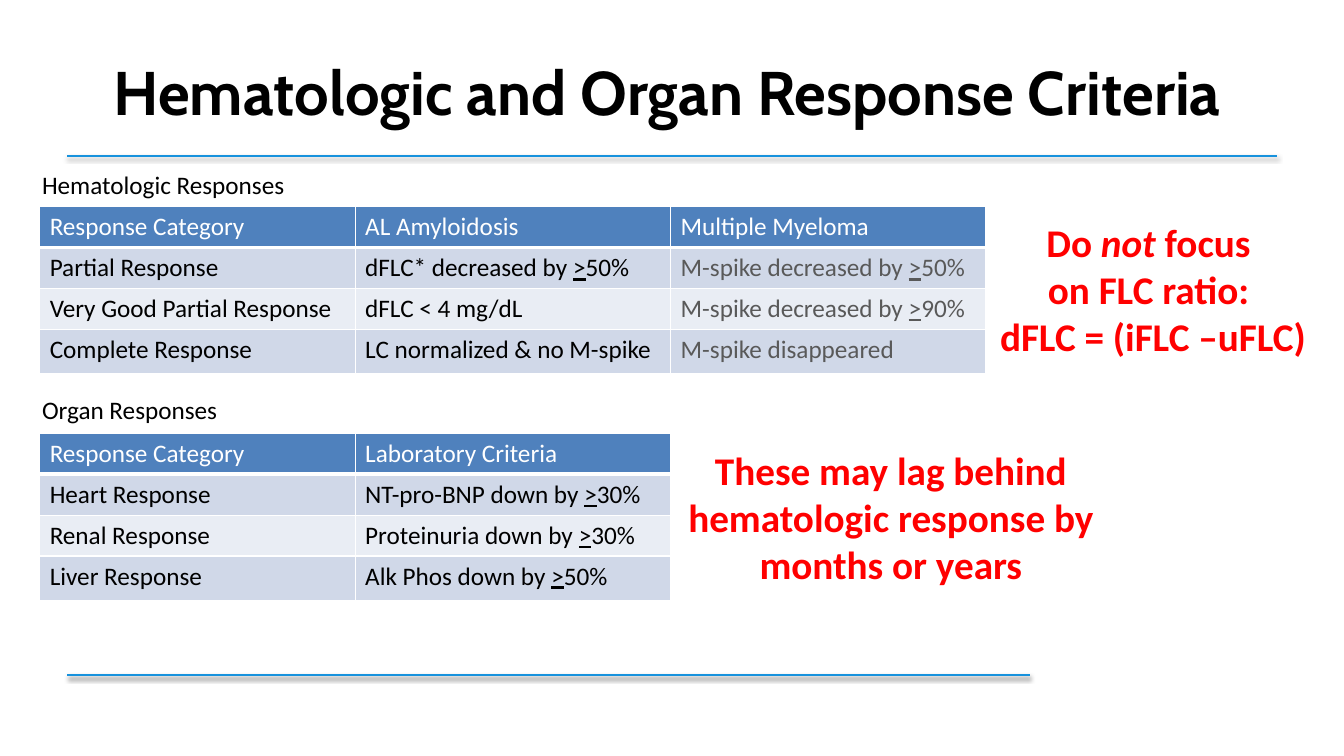
from lxml import etree
from pptx import Presentation
from pptx import util as u
from pptx.dml.color import RGBColor
from pptx.enum import shapes, text
from pptx.oxml import parse_xml
from pptx.oxml.ns import nsdecls, qn

BLACK, WHITE, GREY, RED = "000000", "FFFFFF", "595959", "FF0000"
BLUE, HEADER, BANDS = "1792DD", "4F81BD", ("E9EDF4", "D0D8E8")


def color(value):
    return RGBColor.from_string(value)


class SlideBuilder:
    body_font = "Calibri"
    title_font = "Cabin"
    column_width = u.Cm(7.95)
    row_height = u.Cm(1.03)
    last_row_height = u.Cm(1.12)

    def __init__(self, slide):
        self.slide = slide

    def fill_paragraph(self, paragraph, content, size, ink, bold=False, name=None,
                       underlined=None, italic=None):
        marked = underlined or italic
        parts = content.partition(marked) if marked else (content,)
        for part in filter(None, parts):
            run = paragraph.add_run()
            run.text = part
            if part == underlined:
                run.font.underline = True
            if part == italic:
                run.font.italic = True
        font = paragraph.font
        font.name, font.size, font.bold = name or self.body_font, u.Pt(size), bold
        font.color.rgb = color(ink)

    def textbox(self, left, top, width, height, lines, size, ink=BLACK, wrap=True, centered=True, **style):
        box = self.slide.shapes.add_textbox(u.Cm(left), u.Cm(top), u.Cm(width), u.Cm(height))
        frame = box.text_frame
        frame.word_wrap = wrap
        frame.vertical_anchor = text.MSO_ANCHOR.MIDDLE
        for index, line in enumerate(lines):
            paragraph = frame.add_paragraph() if index else frame.paragraphs[0]
            if centered:
                paragraph.alignment = text.PP_ALIGN.CENTER
            self.fill_paragraph(paragraph, line, size, ink, **style)

    def title(self, content):
        self.textbox(0.81, 1.02, 32.03, 2.54, [content], 44, bold=True, name=self.title_font)

    def label(self, top, width, content):
        self.textbox(0.81, top, width, 1.02, [content], 18, wrap=False, centered=False)

    def callout(self, left, top, width, lines, **style):
        self.textbox(left, top, width, 3.84, lines, 28, RED, bold=True, **style)

    def rule(self, top, right):
        line = self.slide.shapes.add_connector(
            shapes.MSO_CONNECTOR.STRAIGHT, u.Cm(1.7), u.Cm(top), u.Cm(right), u.Cm(top))
        line.line.color.rgb = color(BLUE)
        line.line.width = u.Pt(1.5)
        line._element.spPr.append(parse_xml(
            f'<a:effectLst {nsdecls("a")}><a:outerShdw blurRad="{u.Pt(3.1)}" dist="{u.Pt(1.6)}" '
            f'dir="5400000" rotWithShape="0"><a:srgbClr val="{BLACK}"><a:alpha val="38000"/>'
            '</a:srgbClr></a:outerShdw></a:effectLst>'))

    def borders(self, cell, bottom):
        properties = cell._tc.get_or_add_tcPr()
        for side, width in zip("LRTB", (1, 1, 1, bottom)):
            line = etree.SubElement(properties, qn(f"a:ln{side}"), w=str(u.Pt(width)))
            fill = etree.SubElement(line, qn("a:solidFill"))
            etree.SubElement(fill, qn("a:srgbClr"), val=WHITE)

    def table(self, top, rows):
        columns = len(rows[0])
        height = self.row_height * (len(rows) - 1) + self.last_row_height
        table = self.slide.shapes.add_table(
            len(rows), columns, u.Cm(1), u.Cm(top), self.column_width * columns, height).table
        for column in table.columns:
            column.width = self.column_width
        for row_index, values in enumerate(rows):
            is_last = row_index == len(rows) - 1
            table.rows[row_index].height = self.last_row_height if is_last else self.row_height
            for column_index, value in enumerate(values):
                cell = table.cell(row_index, column_index)
                self.borders(cell, 1 if row_index else 3)
                cell.fill.solid()
                cell.fill.fore_color.rgb = color(BANDS[row_index % 2] if row_index else HEADER)
                ink = (BLACK, BLACK, GREY)[column_index] if row_index else WHITE
                self.fill_paragraph(cell.text_frame.paragraphs[0], value, 18, ink, underlined=">")


def main():
    presentation = Presentation()
    presentation.slide_width, presentation.slide_height = u.Cm(33.87), u.Cm(19.05)
    builder = SlideBuilder(presentation.slides.add_slide(presentation.slide_layouts[6]))

    builder.rule(3.94, 32.18)
    builder.rule(17.02, 25.96)
    builder.title("Hematologic and Organ Response Criteria")

    builder.label(4.14, 6.68, "Hematologic Responses")
    builder.table(5.21, [
        ("Response Category", "AL Amyloidosis", "Multiple Myeloma"),
        ("Partial Response", "dFLC* decreased by >50%", "M-spike decreased by >50%"),
        ("Very Good Partial Response", "dFLC < 4 mg/dL", "M-spike decreased by >90%"),
        ("Complete Response", "LC normalized & no M-spike", "M-spike disappeared"),
    ])
    builder.callout(24.84, 5.36, 8.43,
                    ["Do not focus ", "on FLC ratio: ", "dFLC = (iFLC –uFLC)"], italic="not")

    builder.label(9.8, 4.98, "Organ Responses")
    builder.table(10.92, [
        ("Response Category", "Laboratory Criteria"),
        ("Heart Response", "NT-pro-BNP down by >30%"),
        ("Renal Response", "Proteinuria down by >30%"),
        ("Liver Response", "Alk Phos down by >50%"),
    ])
    builder.callout(16.15, 11.1, 12.6,
                    ["These may lag behind hematologic response by months or years"])

    presentation.save("out.pptx")


if __name__ == "__main__":
    main()
